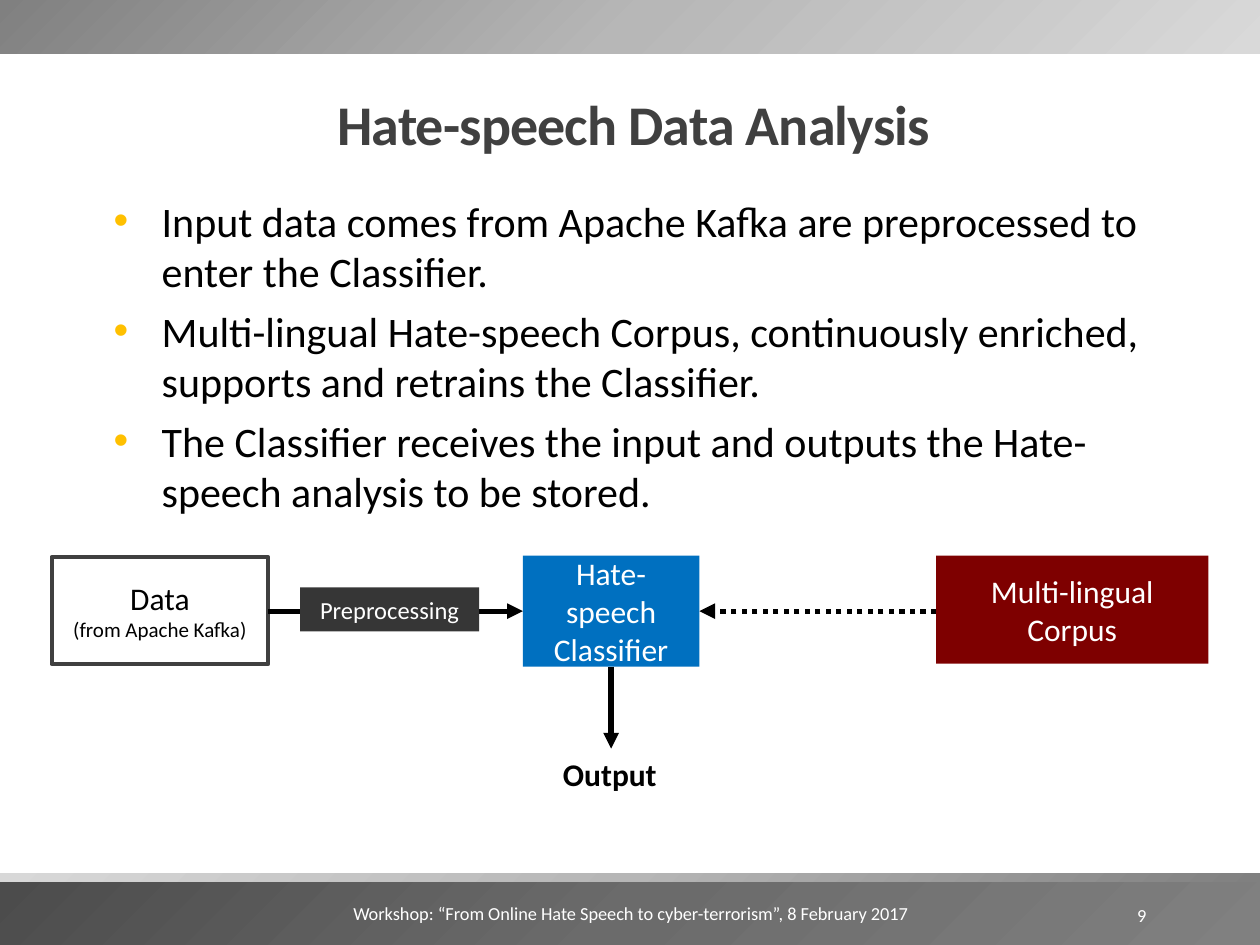
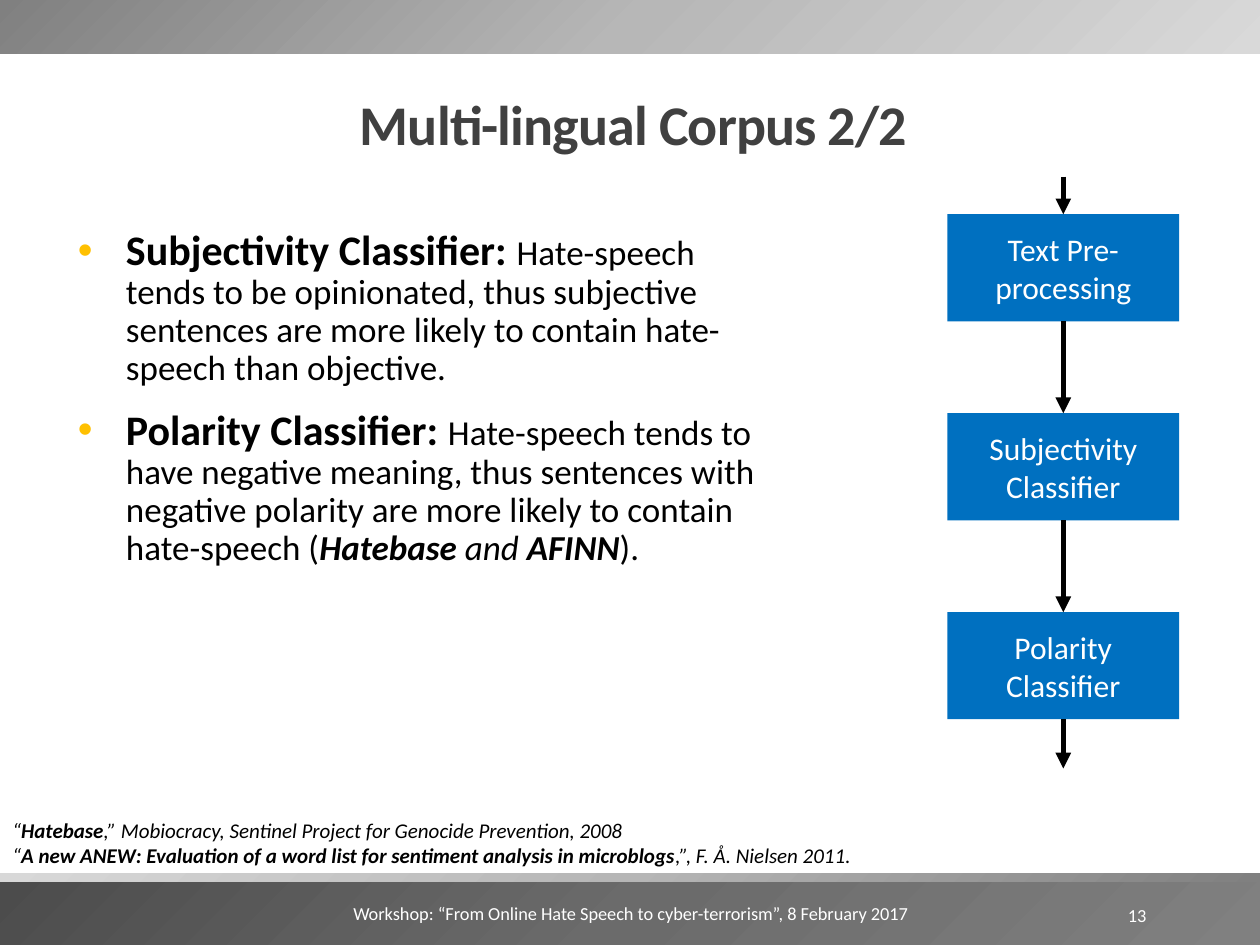
from lxml import etree
from pptx import Presentation
from pptx.dml.color import RGBColor
from pptx.enum.dml import MSO_LINE
from pptx.enum.shapes import MSO_CONNECTOR, MSO_SHAPE
from pptx.enum.text import MSO_ANCHOR, MSO_AUTO_SIZE, PP_ALIGN
from pptx.oxml.ns import qn
from pptx.util import Cm, Pt

RECT, LINE = MSO_SHAPE.RECTANGLE, MSO_CONNECTOR.STRAIGHT
TOP, MID, LOW = MSO_ANCHOR.TOP, MSO_ANCHOR.MIDDLE, MSO_ANCHOR.BOTTOM
LEFT, CENTER, RIGHT = PP_ALIGN.LEFT, PP_ALIGN.CENTER, PP_ALIGN.RIGHT
DOTS, FIXED = MSO_LINE.ROUND_DOT, MSO_AUTO_SIZE.NONE

WIDE, HIGH = 25.4, 19.05
FONT = "Calibri"
BLACK, WHITE, GREY = "000000", "FFFFFF", "404040"
BLUE, RED, DARK, GOLD = "0070C0", "7E0000", "363636", "FFC000"

# Bands: top, height, colours at 0, 50 and 100 %, radial or not
BANDS = [
    (17.78, 1.27, ("4C4C4C", "6B6B6B", "808080"), False),
    (17.6, 0.18, ("808080", "B6B6B6", "D8D8D8"), True),
    (0, 1.09, ("808080", "B7B7B7", "D9D9D9"), False),
]
FOOTER = "Workshop: “From Online Hate Speech to cyber-terrorism”, 8 February 2017"
FOOT_AT = (5.61, 18.06, 14.22, 1.02)
NUM_AT = (20.62, 17.93, 2.74, 1.02)
TITLE_AT = (2.29, 1.7, 20.96, 1.6)

# Run formats
SMALL = {"size": Pt(10.5)}
NOTE = {"size": Pt(12), "italic": True}
NOTE_BOLD = {**NOTE, "bold": True}
LABEL = {"size": Pt(18)}
BIG = {"size": Pt(24)}
HEAD = {**BIG, "bold": True}
BODY = {"size": Pt(20)}
ITALIC = {**BODY, "italic": True}
TERM = {**ITALIC, "bold": True}

# Each paragraph is a list of (text, format) runs
FLOW_TITLE = "Hate-speech Data Analysis"
FLOW_AT = (2.29, 3.81, 20.96, 13.13)
FLOW_TEXT = [
    [("Input data comes from Apache Kafka are preprocessed to enter the Classifier.", BIG)],
    [("Multi-lingual Hate-speech Corpus, continuously enriched, supports and retrains "
      "the Classifier.", BIG)],
    [("The Classifier receives the input and outputs the Hate-speech analysis to be "
      "stored.", BIG)],
]
DATA_AT = (1.04, 11.23, 4.37, 2.16)
PREP_AT = (6.05, 11.84, 3.61, 0.89)
CLASS_AT = (10.54, 11.2, 3.56, 2.24)
CORPUS_AT = (18.87, 11.2, 5.49, 2.18)
OUT_AT = (10.11, 15.09, 4.37, 1.02)
DATA_TEXT = [[("Data", LABEL)], [("(from Apache Kafka)", {"size": Pt(12)})]]

STEP_TITLE = "Multi-lingual Corpus 2/2"
STEP_AT = (1.57, 4.5, 14.02, 13.13)
STEP_TEXT = [
    [("Subjectivity Classifier: ", HEAD),
     ("Hate-speech tends to be opinionated, thus subjective sentences are more likely "
      "to contain hate-speech than objective.", BODY)],
    [("Polarity Classifier: ", HEAD),
     ("Hate-speech tends to have negative meaning, thus sentences with negative "
      "polarity are more likely to contain hate-speech (", BODY),
     ("Hatebase", TERM), (" and ", ITALIC), ("AFINN", TERM), (").", BODY)],
]
CITE_AT = (0, 16.36, 23.77, 1.27)
CITES = [
    [("“", NOTE), ("Hatebase", NOTE_BOLD),
     (",” Mobiocracy, Sentinel Project for Genocide Prevention, 2008", NOTE)],
    [("“", NOTE),
     ("A new ANEW: Evaluation of a word list for sentiment analysis in microblogs", NOTE_BOLD),
     (",”, F. Å. Nielsen 2011.", NOTE)],
]
STEPS = ["Text Pre-processing", "Subjectivity Classifier", "Polarity Classifier"]
STEP_LEFT, STEP_TOP, STEP_W, STEP_H, PITCH = 19.1, 4.32, 4.67, 2.16, 4.01
FLOW_START, FLOW_END = 3.56, 15.49


def rgb(code):
    return RGBColor.from_string(code)


def node(parent, tag, **attrs):
    return etree.SubElement(parent, qn(tag), attrs)


def write(shape, paras, color=BLACK, align=LEFT, anchor=TOP):
    """Fill a shape with paragraphs of formatted runs."""
    frame = shape.text_frame
    frame.word_wrap, frame.auto_size, frame.vertical_anchor = True, FIXED, anchor
    for i, runs in enumerate(paras):
        para = frame.add_paragraph() if i else frame.paragraphs[0]
        para.alignment = align
        for text, form in runs:
            run = para.add_run()
            run.text = text
            run.font.name = FONT
            run.font.color.rgb = rgb(color)
            for key, val in form.items():
                setattr(run.font, key, val)
    return frame


def text(slide, at, paras, *look):
    return write(slide.shapes.add_textbox(*map(Cm, at)), paras, *look)


def block(slide, at, fill, paras=(), color=WHITE, edge=None):
    shape = slide.shapes.add_shape(RECT, *map(Cm, at))
    shape.shadow.inherit = False
    shape.fill.solid()
    shape.fill.fore_color.rgb = rgb(fill)
    if edge:
        shape.line.color.rgb, shape.line.width = rgb(edge), Pt(2.25)
    else:
        shape.line.fill.background()
    write(shape, paras, color, CENTER, MID)
    return shape


def band(slide, top, height, colors, radial):
    props = block(slide, (0, top, WIDE, height), colors[0])._element.spPr
    grad = etree.Element(qn("a:gradFill"), rotWithShape="1")
    stops = node(grad, "a:gsLst")
    for i, code in enumerate(colors):
        node(node(stops, "a:gs", pos=str(i * 50000)), "a:srgbClr", val=code)
    if radial:
        node(node(grad, "a:path", path="circle"), "a:fillToRect", l="100000", t="100000")
    else:
        node(grad, "a:lin", ang="2700000", scaled="0")
    props.replace(props.find(qn("a:solidFill")), grad)


def arrow(slide, x1, y1, x2, y2, dash=None):
    link = slide.shapes.add_connector(LINE, *map(Cm, (x1, y1, x2, y2)))
    link.line.color.rgb, link.line.width = rgb(BLACK), Pt(3)
    if dash:
        link.line.dash_style = dash
    node(link.line._get_or_add_ln(), "a:tailEnd", type="triangle")
    node(link._element.spPr, "a:effectLst")


def bullets(slide, at, paras, gap, lead):
    frame = text(slide, at, paras)
    frame.margin_left = frame.margin_right = 0
    for i, para in enumerate(frame.paragraphs):
        props = para._p.get_or_add_pPr()
        props.set("marL", str(Cm(0.97)))
        props.set("indent", str(-Cm(0.97)))
        node(node(props, "a:buClr"), "a:srgbClr", val=GOLD)
        node(props, "a:buFont", typeface="Arial")
        node(props, "a:buChar", char="•")
        para.line_spacing = lead
        if i:
            para.space_before = Pt(gap)


def start(deck, title, number):
    """Add a slide with its title, bands, footer and number."""
    slide = deck.slides.add_slide(deck.slide_layouts[5])
    for part in BANDS:
        band(slide, *part)
    head = slide.shapes.title
    head.left, head.top, head.width, head.height = map(Cm, TITLE_AT)
    form = {"size": Pt(32), "bold": True}
    para = write(head, [[(title, form)]], GREY, CENTER, LOW).paragraphs[0]
    para.line_spacing = 0.85
    para.runs[0].font._element.set("spc", "-50")
    text(slide, FOOT_AT, [[(FOOTER, SMALL)]], WHITE, CENTER)
    text(slide, NUM_AT, [[(number, SMALL)]], WHITE, RIGHT, MID)
    return slide


def flow(deck):
    slide = start(deck, FLOW_TITLE, "9")
    bullets(slide, FLOW_AT, FLOW_TEXT, 5.3, 1.0)
    left, top, width, height = CLASS_AT
    mid, axis = top + height / 2, left + width / 2
    block(slide, CLASS_AT, BLUE, [[("Hate-speech Classifier", LABEL)]])
    block(slide, CORPUS_AT, RED, [[("Multi-lingual Corpus", LABEL)]])
    block(slide, DATA_AT, WHITE, DATA_TEXT, BLACK, GREY)
    block(slide, OUT_AT, WHITE, [[("Output", {**LABEL, "bold": True})]], BLACK, WHITE)
    arrow(slide, CORPUS_AT[0], mid, left + width, mid, DOTS)
    arrow(slide, axis, top + height, axis, OUT_AT[1])
    arrow(slide, DATA_AT[0] + DATA_AT[2], mid, left, mid)
    block(slide, PREP_AT, DARK, [[("Preprocessing", {"size": Pt(14)})]])


def steps(deck):
    slide = start(deck, STEP_TITLE, "13")
    bullets(slide, STEP_AT, STEP_TEXT, 12, 0.9)
    text(slide, CITE_AT, CITES)
    axis = STEP_LEFT + STEP_W / 2
    tops = [STEP_TOP + i * PITCH for i in range(len(STEPS))]
    for name, top in zip(STEPS, tops):
        block(slide, (STEP_LEFT, top, STEP_W, STEP_H), BLUE, [[(name, LABEL)]])
    tails = [FLOW_START] + [top + STEP_H for top in tops]
    for tail, tip in zip(tails, tops + [FLOW_END]):
        arrow(slide, axis, tail, axis, tip)


def main():
    deck = Presentation()
    deck.slide_width, deck.slide_height = Cm(WIDE), Cm(HIGH)
    flow(deck)
    steps(deck)
    deck.save("out.pptx")


if __name__ == "__main__":
    main()
